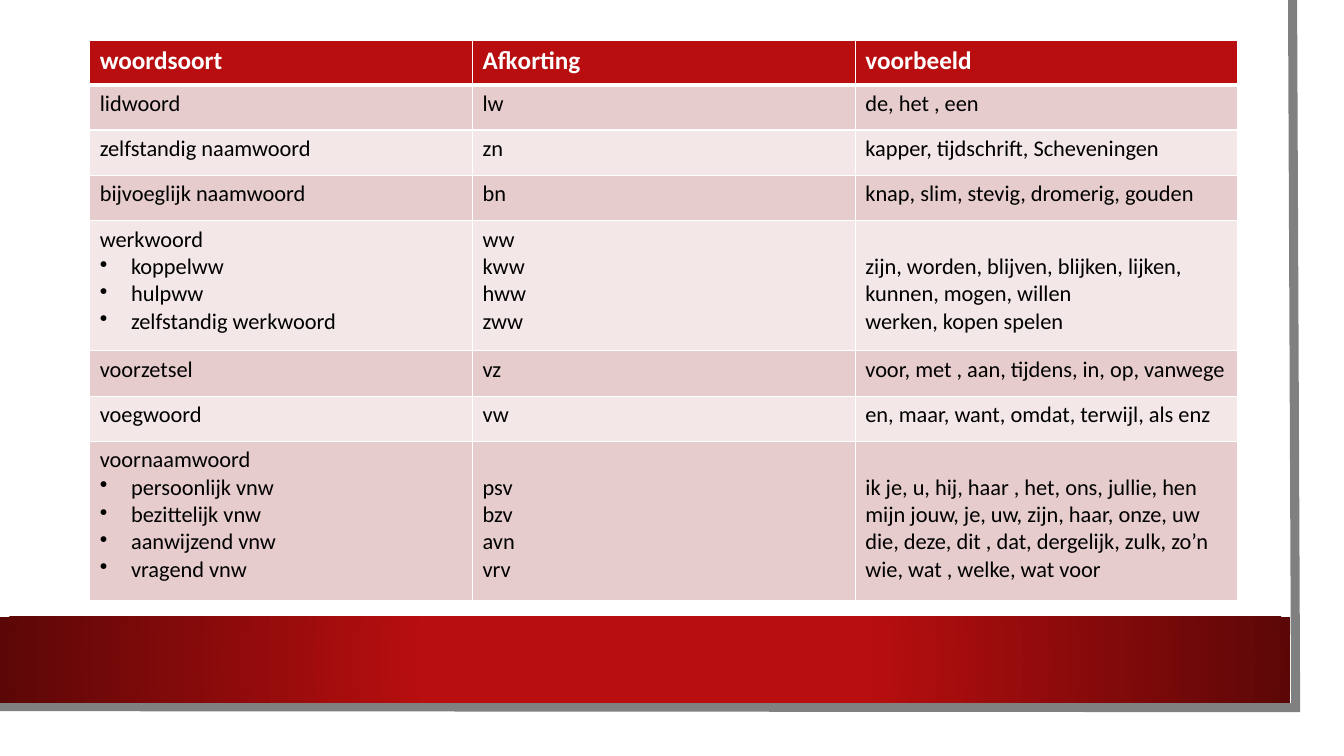
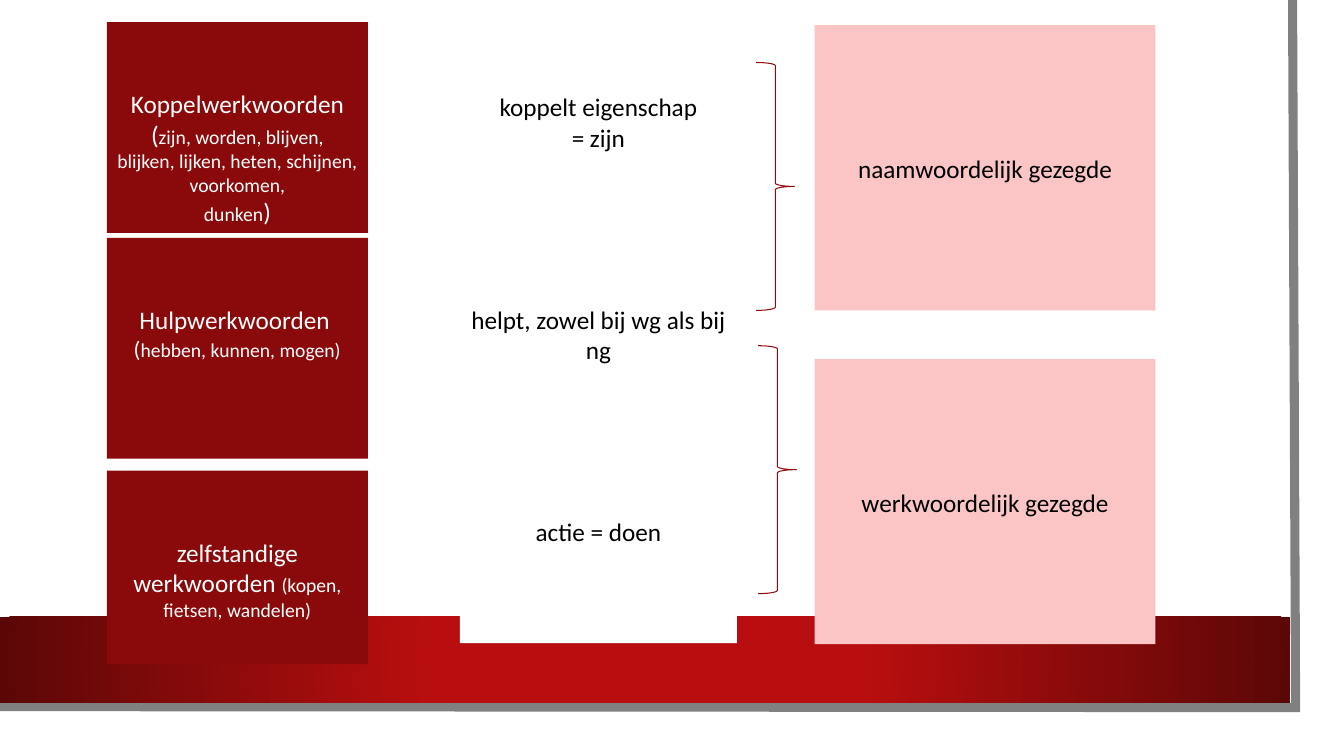
import pptx
import pptx.dml.color
import pptx.enum.shapes
import pptx.enum.text
import pptx.oxml
import pptx.oxml.ns
import pptx.util
import lxml.etree

Inches = pptx.util.Inches
Pt = pptx.util.Pt
qn = pptx.oxml.ns.qn
SHAPE = pptx.enum.shapes.MSO_SHAPE
ALIGN = pptx.enum.text.PP_ALIGN
ANCHOR = pptx.enum.text.MSO_ANCHOR

WORD_CLASSES = [
    (0.44, ["woordsoort"], ["Afkorting"], ["voorbeeld"]),
    (0.45, ["lidwoord"], ["lw"], ["de, het , een"]),
    (0.45, ["zelfstandig naamwoord"], ["zn"], ["kapper, tijdschrift, Scheveningen"]),
    (0.45, ["bijvoeglijk naamwoord"], ["bn"], ["knap, slim, stevig, dromerig, gouden"]),
    (1.29, ["werkwoord", "koppelww", "hulpww", "zelfstandig werkwoord"],
     ["ww", "kww", "hww", "zww"],
     ["zijn, worden, blijven, blijken, lijken,", "kunnen, mogen, willen",
      "werken, kopen spelen"]),
    (0.45, ["voorzetsel"], ["vz"], ["voor, met , aan, tijdens, in, op, vanwege"]),
    (0.45, ["voegwoord"], ["vw"], ["en, maar, want, omdat, terwijl, als enz"]),
    (1.58, ["voornaamwoord", "persoonlijk vnw", "bezittelijk vnw", "aanwijzend vnw",
            "vragend vnw"],
     ["psv", "bzv", "avn", "vrv"],
     ["ik je, u, hij, haar , het, ons, jullie, hen",
      "mijn jouw, je, uw, zijn, haar, onze, uw",
      "die, deze, dit , dat, dergelijk, zulk, zo’n", "wie, wat , welke, wat voor"]),
]

VERB_KINDS = [
    (0.22, 2.09, ["Koppelwerkwoorden", [("(", 18), ("zijn, worden, blijven,", 14)],
                  [("blijken, lijken, heten, schijnen, voorkomen,", 14)],
                  [("dunken", 14), (")", 18)]]),
    (2.36, 2.19, ["Hulpwerkwoorden ", [("(", 16), ("hebben, kunnen, mogen)", 14)]]),
    (4.67, 1.92, ["zelfstandige",
                  [("werkwoorden ", 18), ("(kopen, fietsen, wandelen)", 14)]]),
]
MEANINGS = [
    (0.25, ["koppelt eigenschap", "= zijn"]),
    (2.36, ["helpt, zowel bij wg als bij ng"]),
    (4.46, ["actie = doen"]),
]
PREDICATES = [(0.25, "naamwoordelijk gezegde"), (3.56, "werkwoordelijk gezegde")]
BRACES = [(7.5, 0.62), (7.52, 3.43)]


def color(value):
    return pptx.dml.color.RGBColor.from_string(value)


def write(frame, paragraphs, size=18, ink="000000", bold=False, align=ALIGN.LEFT,
          font="Calibri", bullets_from=None):
    frame.word_wrap = True
    for index, content in enumerate(paragraphs):
        paragraph = frame.paragraphs[0] if index == 0 else frame.add_paragraph()
        paragraph.alignment = align
        if bullets_from is not None and index >= bullets_from:
            properties = paragraph._p.get_or_add_pPr()
            properties.set("marL", str(Inches(0.31)))
            properties.set("indent", str(-Inches(0.31)))
            lxml.etree.SubElement(properties, qn("a:buChar")).set("char", "•")
        runs = [(content, size)] if isinstance(content, str) else content
        for text, run_size in runs:
            run = paragraph.add_run()
            run.text = text
            run.font.name = font
            run.font.size = Pt(run_size)
            run.font.bold = bold
            run.font.color.rgb = color(ink)


class Deck:
    """Holds the style of the presentation and its current slide."""

    red, dark, deep, pink = "B80E0F", "8A0A0B", "5C0707", "FBC5C5"
    brace_line, edge, white, black = "930B0C", "808080", "FFFFFF", "000000"
    stripes = ("F3E7E7", "E6CCCC")
    line_height = 1.22 / 72

    def __init__(self):
        self.presentation = pptx.Presentation()
        self.presentation.slide_width = Inches(13.33)
        self.presentation.slide_height = Inches(7.5)
        self.slide = None

    def new_slide(self):
        self.slide = self.presentation.slides.add_slide(self.presentation.slide_layouts[6])
        self.rectangle(0, 0, 13.1, 7.27, self.white)
        self.paper_edge()
        self.band()

    def rectangle(self, left, top, width, height, fill):
        shape = self.slide.shapes.add_shape(
            SHAPE.RECTANGLE, Inches(left), Inches(top), Inches(width), Inches(height))
        shape.shadow.inherit = False
        shape.fill.solid()
        shape.fill.fore_color.rgb = color(fill)
        shape.line.fill.background()
        return shape

    def outline(self, shape, ink, weight):
        shape.shadow.inherit = False
        shape.fill.background()
        shape.line.color.rgb = color(ink)
        shape.line.width = Pt(weight)

    def paper_edge(self):
        builder = self.slide.shapes.build_freeform(Inches(12.82), 0)
        corners = [(12.85, 7.02), (-0.03, 7.01)]
        builder.add_line_segments([(Inches(x), Inches(y)) for x, y in corners], close=False)
        shape = builder.convert_to_shape()
        self.outline(shape, self.edge, 6.5)
        join = lxml.etree.SubElement(shape.line._get_or_add_ln(), qn("a:miter"))
        join.set("lim", "800000")

    def band(self):
        shape = self.rectangle(0, 6.12, 12.8, 0.85, self.red)
        shape.fill.gradient()
        stops = zip(shape.fill.gradient_stops, [(0.34, self.red), (1, self.deep)])
        for stop, (position, shade) in stops:
            stop.position = position
            stop.color.rgb = color(shade)
        linear = shape._element.spPr.find(qn("a:gradFill")).find(qn("a:lin"))
        circle = lxml.etree.Element(qn("a:path"))
        circle.set("path", "circle")
        center = lxml.etree.SubElement(circle, qn("a:fillToRect"))
        for side in "ltrb":
            center.set(side, "50000")
        linear.getparent().replace(linear, circle)

    def box(self, left, top, width, height, paragraphs, fill, ink, lines_above=2):
        shape = self.rectangle(left, top, width, height, fill)
        frame = shape.text_frame
        frame.vertical_anchor = ANCHOR.TOP
        frame.margin_top = Inches(0.05 + lines_above * 18 * self.line_height)
        write(frame, paragraphs, ink=ink, align=ALIGN.CENTER)

    def brace(self, left, top, width, height):
        shape = self.slide.shapes.add_shape(
            SHAPE.RIGHT_BRACE, Inches(left), Inches(top), Inches(width), Inches(height))
        self.outline(shape, self.brace_line, 0.75)

    def borders(self, cell, **weights):
        properties = cell._tc.get_or_add_tcPr()
        for side in "LRTB":
            properties.append(pptx.oxml.parse_xml(
                f'<a:ln{side} {pptx.oxml.ns.nsdecls("a")} w="{Pt(weights.get(side, 1))}">'
                f'<a:solidFill><a:srgbClr val="{self.white}"/></a:solidFill></a:ln{side}>'))

    def table(self, left, top, width, rows):
        columns = len(rows[0]) - 1
        height = sum(row[0] for row in rows)
        table = self.slide.shapes.add_table(
            len(rows), columns, Inches(left), Inches(top), Inches(width), Inches(height)).table
        table.horz_banding = False
        for row_index, (row_height, *contents) in enumerate(rows):
            table.rows[row_index].height = Inches(row_height)
            header = row_index == 0
            weights = {0: {"B": 3}, 1: {"T": 3}}.get(row_index, {})
            for column, paragraphs in enumerate(contents):
                cell = table.cell(row_index, column)
                self.borders(cell, **weights)
                cell.fill.solid()
                cell.fill.fore_color.rgb = color(
                    self.red if header else self.stripes[row_index % 2])
                lines_above = int(len(paragraphs) < len(contents[0]))
                cell.margin_top = Inches(0.05 + lines_above * 16 * self.line_height)
                write(cell.text_frame, paragraphs, size=18 if header else 16,
                      ink=self.white if header else self.black, bold=header,
                      bullets_from=1 if column == 0 else None)


def main():
    deck = Deck()

    deck.new_slide()
    deck.table(0.89, 0.4, 11.39, WORD_CLASSES)

    deck.new_slide()
    for top, height, paragraphs in VERB_KINDS:
        deck.box(1.06, top, 2.59, height, paragraphs, deck.dark, deck.white)
    for top, paragraphs in MEANINGS:
        deck.box(4.56, top, 2.75, 1.92, paragraphs, deck.white, deck.black)
    for top, predicate in PREDICATES:
        deck.box(8.08, top, 3.38, 2.83, [predicate], deck.pink, deck.black, lines_above=4)
    for left, top in BRACES:
        deck.brace(left, top, 0.38, 2.46)

    deck.presentation.save("out.pptx")


if __name__ == "__main__":
    main()
